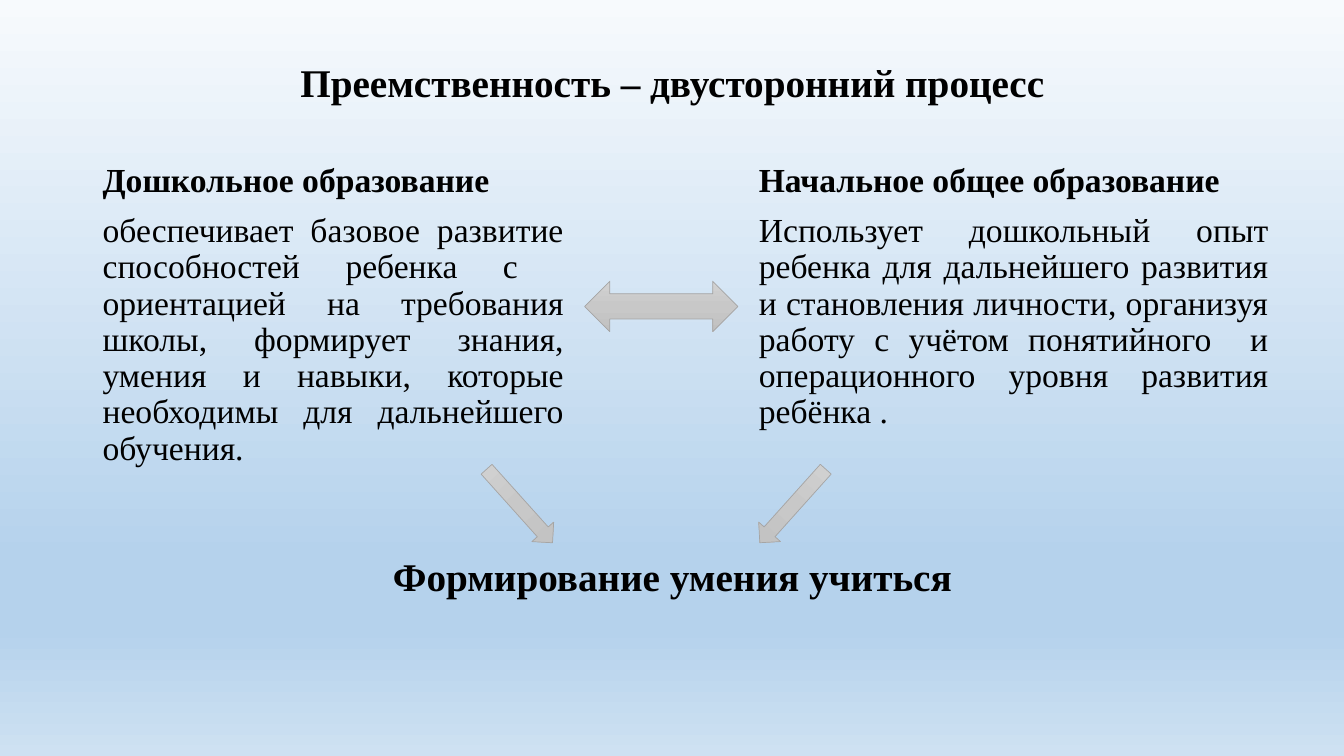
from pptx import Presentation
from pptx.dml.color import RGBColor
from pptx.enum.shapes import MSO_SHAPE as Shape
from pptx.enum.text import MSO_ANCHOR as Anchor, PP_ALIGN as Align
from pptx.oxml.ns import qn
from pptx.util import Pt
from lxml.etree import SubElement as Sub

BLACK = RGBColor(0x00, 0x00, 0x00)
EDGE = RGBColor(0xA5, 0xA5, 0xA5)
SKY = [
    (0, RGBColor(0xF7, 0xFA, 0xFD)),
    (74, RGBColor(0xB5, 0xD2, 0xEC)),
    (83, RGBColor(0xB5, 0xD2, 0xEC)),
    (100, RGBColor(0xCE, 0xE1, 0xF2)),
]
GREY = [
    (0, RGBColor(0xD2, 0xD2, 0xD2)),
    (50, RGBColor(0xC8, 0xC8, 0xC8)),
    (100, RGBColor(0xC0, 0xC0, 0xC0)),
]
FONT = "Times New Roman"
LEFT = 66.24
WIDE = 828
HIGH = 104.4


def shade(fill, owner, stops):
    fill.gradient()
    fill.gradient_angle = 270
    group = owner.element.find(".//" + qn("a:gsLst"))
    for old in list(group):
        group.remove(old)
    for place, color in stops:
        stop = Sub(group, qn("a:gs"), pos=str(place * 1000))
        Sub(stop, qn("a:srgbClr"), val=str(color))


def add_text(slide, box, *lines, size=24, align=Align.JUSTIFY, anchor=Anchor.TOP, before=10):
    frame = slide.shapes.add_textbox(*map(Pt, box)).text_frame
    frame.word_wrap = True
    frame.vertical_anchor = anchor
    for index, line in enumerate(lines):
        para = frame.add_paragraph() if index else frame.paragraphs[0]
        para.alignment = align
        para.line_spacing = 0.9
        para.space_before = Pt(before)
        run = para.add_run()
        run.text = line
        font = run.font
        font.name = FONT
        font.size = Pt(size)
        font.bold = index == 0
        font.color.rgb = BLACK


def add_head(slide, top, text):
    add_text(slide, (LEFT, top, WIDE, HIGH), text, size=28,
             align=Align.CENTER, anchor=Anchor.MIDDLE, before=0)


def add_arrow(slide, kind, box, turn=0):
    arrow = slide.shapes.add_shape(kind, *map(Pt, box))
    arrow.shadow.inherit = False
    arrow.rotation = turn
    shade(arrow.fill, arrow, GREY)
    arrow.line.color.rgb = EDGE
    arrow.line.width = Pt(0.5)


def main():
    deck = Presentation()
    deck.slide_width = Pt(960)
    deck.slide_height = Pt(540)
    slide = deck.slides.add_slide(deck.slide_layouts[6])
    shade(slide.background.fill, slide, SKY)

    add_head(slide, 8.64, "Преемственность – двусторонний процесс")
    add_text(
        slide, (LEFT, 113.04, 343.44, 342.72),
        "Дошкольное образование",
        "обеспечивает базовое развитие способностей ребенка с  ориентацией "
        "на требования школы, формирует знания, умения и навыки, которые "
        "необходимы для дальнейшего обучения.",
    )
    add_text(
        slide, (534.96, 113.04, 378, 342.72),
        "Начальное общее образование",
        "Использует дошкольный опыт ребенка для дальнейшего развития и "
        "становления личности, организуя работу с учётом понятийного  и "
        "операционного уровня развития ребёнка .",
    )
    add_arrow(slide, Shape.LEFT_RIGHT_ARROW, (417.6, 200.88, 109.44, 36))
    add_head(slide, 361.44, "Формирование умения учиться")
    for left, turn in ((360.72, 318.1), (555.84, 41.9)):
        add_arrow(slide, Shape.DOWN_ARROW, (left, 326.16, 20.88, 70.56), turn)

    deck.save("out.pptx")


if __name__ == "__main__":
    main()
